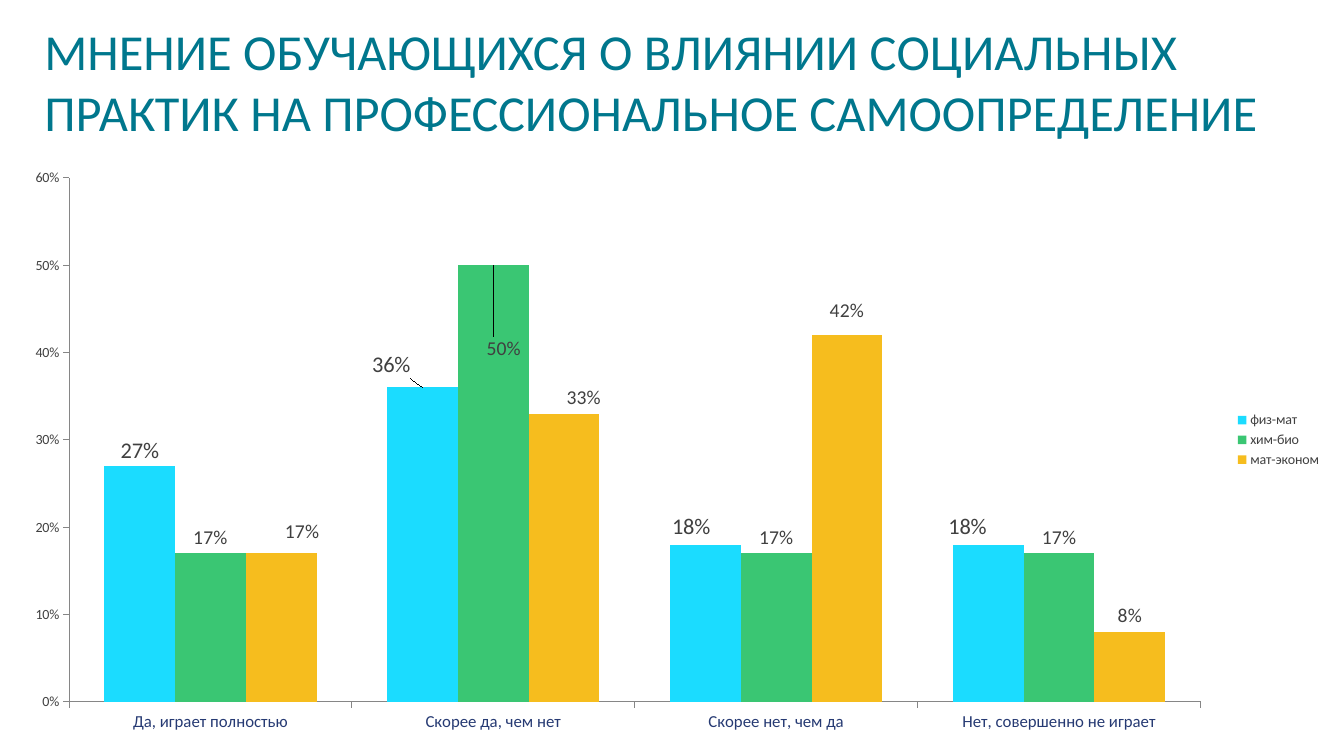
"""Build the slide on how pupils see the effect of social practice."""
from typing import NamedTuple

from lxml.etree import SubElement
from pptx import Presentation
from pptx.chart.chart import Chart
from pptx.chart.data import CategoryChartData
from pptx.dml.color import RGBColor
from pptx.enum.chart import (XL_CHART_TYPE, XL_LABEL_POSITION,
                             XL_LEGEND_POSITION, XL_TICK_MARK)
from pptx.enum.text import MSO_ANCHOR, MSO_AUTO_SIZE, PP_ALIGN
from pptx.oxml import parse_xml
from pptx.oxml.ns import nsdecls, qn
from pptx.slide import Slide
from pptx.util import Emu, Inches, Pt

FONT = "Calibri"
CELL = Inches(0.1)
COLORS = {"title": "00778D", "text": "404040", "topic": "263A73",
          "axis": "868686", "cyan": "1BDCFF", "green": "3AC673",
          "gold": "F6BD1E"}
TITLE = ("МНЕНИЕ ОБУЧАЮЩИХСЯ О ВЛИЯНИИ СОЦИАЛЬНЫХ ПРАКТИК "
         "НА ПРОФЕССИОНАЛЬНОЕ САМООПРЕДЕЛЕНИЕ")
TOPICS = ("Да, играет полностью", "Скорее да, чем нет",
          "Скорее нет, чем да", "Нет, совершенно не играет")


class Box(NamedTuple):
    """A place in grid columns and rows."""
    col: float
    row: float
    wide: float
    high: float

    def span(self) -> list[Emu]:
        """Return left, top, width and height."""
        return [Emu(round(part * CELL)) for part in self]


class Shift(NamedTuple):
    """A label moved by percent of the chart's size."""
    point: int
    x: float
    y: float


class Group(NamedTuple):
    """One class profile and its bars."""
    name: str
    color: str
    size: int
    values: tuple[float, ...]
    shifts: tuple[Shift, ...]


TITLE_BOX = Box(3.4, 1.5, 128, 13.1)
CHART_BOX = Box(1.9, 14.7, 130.2, 57.9)
PLOT = {"x": 3.8, "y": 5.1, "w": 86.2, "h": 89.8}
GROUPS = (
    Group("физ-мат", "cyan", 16, (0.27, 0.36, 0.18, 0.18),
          (Shift(0, 0, 0.5), Shift(1, -2.4, -0.9),
           Shift(2, -1.1, 0), Shift(3, -1.6, 0))),
    Group("хим-био", "green", 14, (0.17, 0.5, 0.17, 0.17),
          (Shift(1, 0.8, 17.1),)),
    Group("мат-эконом", "gold", 14, (0.17, 0.33, 0.42, 0.08),
          (Shift(0, 1.6, -0.9), Shift(1, 1.5, 0), Shift(2, 0, -1.4))),
)


def paint(font, size: int, color: str) -> None:
    """Set the face, size and colour of a font."""
    font.name, font.size = FONT, Pt(size)
    font.color.rgb = RGBColor.from_string(COLORS[color])


def layout(parts: dict[str, float], inner: bool = False):
    """Make a manual layout from percents."""
    root = parse_xml(f"<c:layout {nsdecls('c')}><c:manualLayout/></c:layout>")
    rules = {"layoutTarget": "inner", "xMode": "edge",
             "yMode": "edge"} if inner else {}
    rules |= {key: f"{part / 100:.3f}" for key, part in parts.items()}
    for key, value in rules.items():
        SubElement(root[0], qn(f"c:{key}")).set("val", value)
    return root


def add_title(slide: Slide) -> None:
    """Place and format the title."""
    shape = slide.shapes.title
    shape.left, shape.top, shape.width, shape.height = TITLE_BOX.span()
    frame = shape.text_frame
    frame.text = TITLE
    frame.word_wrap = True
    frame.auto_size = MSO_AUTO_SIZE.SHAPE_TO_FIT_TEXT
    frame.vertical_anchor = MSO_ANCHOR.TOP
    line = frame.paragraphs[0]
    line.alignment = PP_ALIGN.LEFT
    paint(line.font, 36, "title")


def style_axes(chart: Chart) -> None:
    """Format both axes."""
    for axis, size, color in ((chart.category_axis, 12, "topic"),
                              (chart.value_axis, 10, "text")):
        axis.has_major_gridlines = False
        axis.major_tick_mark = XL_TICK_MARK.OUTSIDE
        axis.minor_tick_mark = XL_TICK_MARK.NONE
        axis.format.line.color.rgb = RGBColor.from_string(COLORS["axis"])
        axis.format.line.width = Pt(0.75)
        paint(axis.tick_labels.font, size, color)
    scale = chart.value_axis
    scale.minimum_scale, scale.maximum_scale = 0, 0.6
    scale.major_unit = 0.1
    scale.tick_labels.number_format = "0%"
    scale.tick_labels.number_format_is_linked = False


def style_bars(chart: Chart) -> None:
    """Colour the bars and set their labels."""
    plot = chart.plots[0]
    plot.gap_width, plot.overlap = 100, 0
    plot.vary_by_categories = False
    for group, bars in zip(GROUPS, plot.series):
        bars.format.fill.solid()
        bars.format.fill.fore_color.rgb = RGBColor.from_string(
            COLORS[group.color])
        labels = bars.data_labels
        labels.show_value = True
        labels.number_format = "0%"
        labels.number_format_is_linked = False
        labels.position = XL_LABEL_POSITION.OUTSIDE_END
        paint(labels.font, group.size, "text")
        for shift in group.shifts:
            label = bars.points[shift.point].data_label
            paint(label.font, group.size, "text")
            label.position = XL_LABEL_POSITION.OUTSIDE_END
    shifts = [shift for group in GROUPS for shift in group.shifts]
    for shift, mark in zip(shifts, chart.element.xpath(".//c:dLbl/c:idx")):
        mark.addnext(layout({"x": shift.x, "y": shift.y}))


def add_bars(slide: Slide) -> None:
    """Add the column chart."""
    data = CategoryChartData(number_format="0%")
    data.categories = TOPICS
    for group in GROUPS:
        data.add_series(group.name, group.values)
    chart = slide.shapes.add_chart(
        XL_CHART_TYPE.COLUMN_CLUSTERED, *CHART_BOX.span(), data).chart
    chart.has_title = False
    paint(chart.font, 10, "text")
    chart.has_legend = True
    chart.legend.position = XL_LEGEND_POSITION.RIGHT
    chart.legend.include_in_layout = False
    paint(chart.legend.font, 10, "text")
    style_axes(chart)
    style_bars(chart)
    area = chart.element.xpath(".//c:plotArea")[0]
    for old in area.xpath("./c:layout"):
        area.remove(old)
    area.insert(0, layout(PLOT, inner=True))


def main() -> None:
    """Build and save the slide."""
    deck = Presentation()
    deck.slide_width, deck.slide_height = Inches(13.33), Inches(7.5)
    slide = deck.slides.add_slide(deck.slide_layouts[5])
    add_bars(slide)
    add_title(slide)
    deck.save("out.pptx")


if __name__ == "__main__":
    main()
